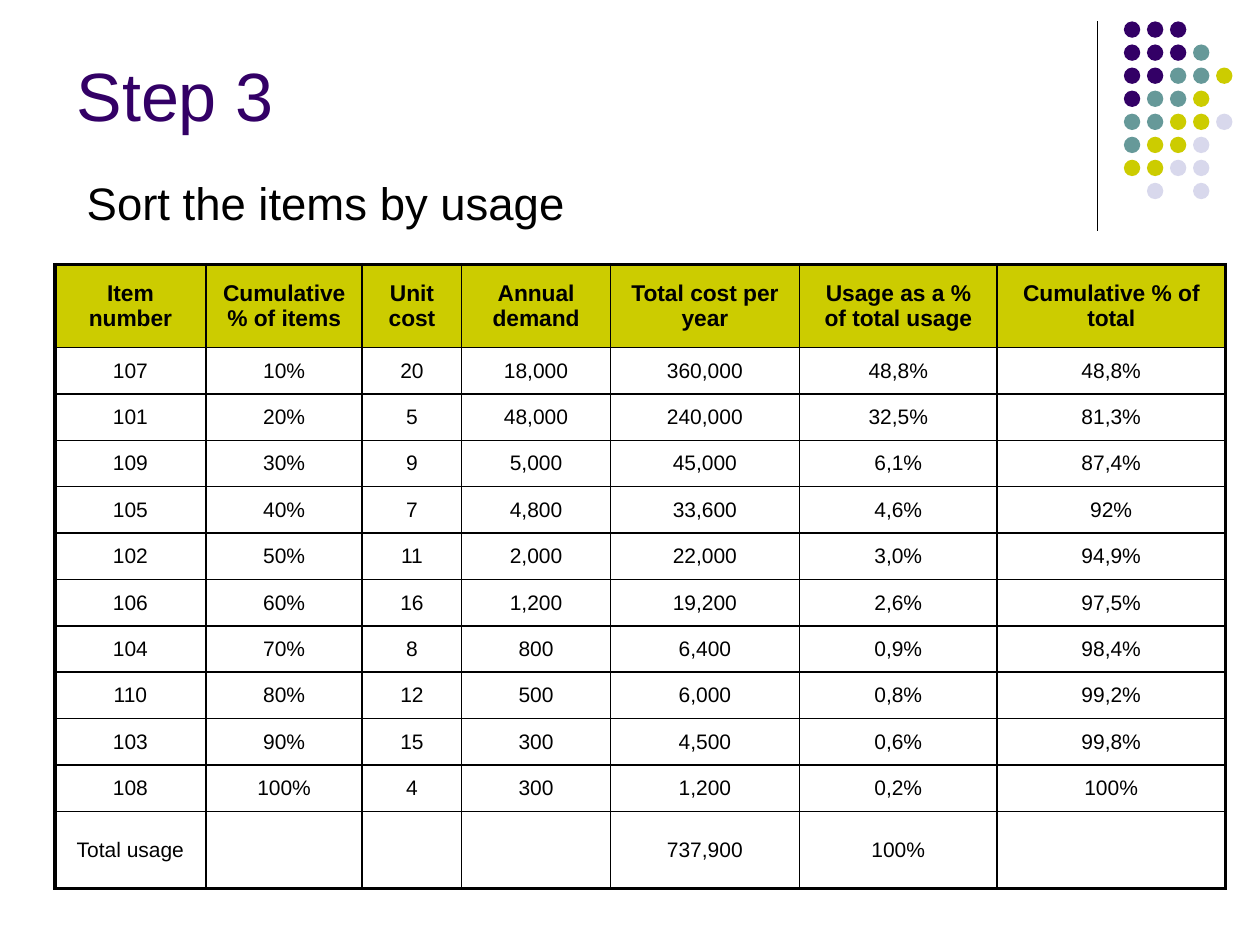
from typing import NamedTuple

from lxml import etree
from pptx import Presentation
from pptx.dml.color import RGBColor
from pptx.enum.shapes import MSO_CONNECTOR, MSO_SHAPE
from pptx.enum.text import MSO_ANCHOR, PP_ALIGN
from pptx.oxml.ns import qn
from pptx.util import Inches, Pt

BLACK = RGBColor(0x00, 0x00, 0x00)
PLUM = RGBColor(0x33, 0x00, 0x66)
TEAL = RGBColor(0x66, 0x99, 0x99)
LIME = RGBColor(0xCC, 0xCC, 0x00)
MIST = RGBColor(0xD8, 0xD8, 0xEC)

TOP, MIDDLE = MSO_ANCHOR.TOP, MSO_ANCHOR.MIDDLE
CENTER = PP_ALIGN.CENTER
OVAL = MSO_SHAPE.OVAL
STRAIGHT = MSO_CONNECTOR.STRAIGHT

WIDE, HIGH = Inches(10), Inches(7.5)
FONT = "Arial"
THIN, THICK = Pt(1), Pt(2.25)

# Dot pattern: one letter per dot, one string per row
HUES = {"P": PLUM, "T": TEAL, "L": LIME, "M": MIST}
DOTS = ["PPP", "PPPT", "PPTTL", "PTTL", "TTLLM", "TLLM", "LLMM", " M M"]
PITCH, DOT = Inches(0.183), Inches(0.13)

# Table grid: percent of the slide's width and height
COLS = [12, 12.4, 7.9, 11.8, 15, 15.7, 18.1]
ROWS = [8.78] + [4.91] * 10 + [8.15]
HEAD = ["Item number", "Cumulative % of items", "Unit cost", "Annual demand",
        "Total cost per year", "Usage as a % of total usage",
        "Cumulative % of total"]
ITEMS = [
    ["107", "10%", "20", "18,000", "360,000", "48,8%", "48,8%"],
    ["101", "20%", "5", "48,000", "240,000", "32,5%", "81,3%"],
    ["109", "30%", "9", "5,000", "45,000", "6,1%", "87,4%"],
    ["105", "40%", "7", "4,800", "33,600", "4,6%", "92%"],
    ["102", "50%", "11", "2,000", "22,000", "3,0%", "94,9%"],
    ["106", "60%", "16", "1,200", "19,200", "2,6%", "97,5%"],
    ["104", "70%", "8", "800", "6,400", "0,9%", "98,4%"],
    ["110", "80%", "12", "500", "6,000", "0,8%", "99,2%"],
    ["103", "90%", "15", "300", "4,500", "0,6%", "99,8%"],
    ["108", "100%", "4", "300", "1,200", "0,2%", "100%"],
]
TOTAL = ["Total usage", "", "", "", "737,900", "100%", ""]


class Label(NamedTuple):
    """Text in a box whose place is in percent of the slide."""
    text: str
    left: float
    top: float
    width: float
    height: float
    size: float
    color: RGBColor
    anchor: MSO_ANCHOR
    inset: float


LABELS = [
    Label("Step 3", 5.1, 0, 82.5, 18.93, 39, PLUM, MIDDLE, 0.13),
    Label("Sort the items by usage", 5.9, 17.47, 70, 65.6, 26, BLACK, TOP, 0.08),
]


def across(share: float) -> int:
    return round(WIDE * share / 100)


def down(share: float) -> int:
    return round(HIGH * share / 100)


def style(font, size: float, color: RGBColor, bold: bool = False) -> None:
    for key, value in {"name": FONT, "size": Pt(size), "bold": bold}.items():
        setattr(font, key, value)
    font.color.rgb = color


def add_label(slide, label: Label) -> None:
    box = slide.shapes.add_textbox(across(label.left), down(label.top),
                                   across(label.width), down(label.height))
    frame = box.text_frame
    form = {"word_wrap": True, "vertical_anchor": label.anchor,
            "margin_top": Inches(label.inset), "text": label.text}
    for key, value in form.items():
        setattr(frame, key, value)
    style(frame.paragraphs[0].runs[0].font, label.size, label.color)


def add_rule(slide) -> None:
    rule = slide.shapes.add_connector(STRAIGHT, across(87.1), down(2.27),
                                      across(87.1), down(24.4))
    rule.line.width = Pt(0.75)
    rule.line.color.rgb = BLACK
    props = rule._element.spPr
    etree.SubElement(props, qn("a:effectLst"))


def add_dots(slide) -> None:
    group = slide.shapes.add_group_shape()
    for row, hues in enumerate(DOTS):
        for col, hue in enumerate(hues):
            if hue not in HUES:
                continue
            dot = group.shapes.add_shape(OVAL, across(89.2) + col * PITCH,
                                         down(2.27) + row * PITCH, DOT, DOT)
            dot.shadow.inherit = False
            dot.fill.solid()
            dot.fill.fore_color.rgb = HUES[hue]
            dot.line.fill.background()


def add_edges(cell, edges: dict[str, int]) -> None:
    """Draw the cell's borders, which must precede its fill in the XML."""
    props = cell._tc.get_or_add_tcPr()
    for place, (side, width) in enumerate(edges.items()):
        line = etree.Element(qn(f"a:ln{side}"), w=str(width))
        fill = etree.SubElement(line, qn("a:solidFill"))
        etree.SubElement(fill, qn("a:srgbClr"), val=str(BLACK))
        props.insert(place, line)


def fill_cell(cell, text: str, head: bool) -> None:
    cell.vertical_anchor = MIDDLE
    if head:
        cell.fill.solid()
        cell.fill.fore_color.rgb = LIME
    else:
        cell.fill.background()
    para = cell.text_frame.paragraphs[0]
    para.alignment = CENTER
    style(para.font, 13 if head else 12, BLACK, head)
    if text:
        run = para.add_run()
        run.text = text
        style(run.font, 13 if head else 12, BLACK, head)


def add_grid(slide) -> None:
    data = [HEAD, *ITEMS, TOTAL]
    table = slide.shapes.add_table(len(ROWS), len(COLS), across(4.35), down(28),
                                   across(sum(COLS)), down(sum(ROWS))).table
    table.first_row = table.horz_banding = False
    for col, share in zip(table.columns, COLS):
        col.width = across(share)
    for row, share in zip(table.rows, ROWS):
        row.height = down(share)
    for r, texts in enumerate(data):
        for c, text in enumerate(texts):
            cell = table.cell(r, c)
            fill_cell(cell, text, r == 0)
            outer = {"L": c == 0, "R": c == len(COLS) - 1,
                     "T": r == 0, "B": r == len(ROWS) - 1}
            add_edges(cell, {side: THICK if rim else THIN
                             for side, rim in outer.items()})


def main() -> None:
    deck = Presentation()
    deck.slide_width, deck.slide_height = WIDE, HIGH
    slide = deck.slides.add_slide(deck.slide_layouts[6])
    add_rule(slide)
    add_dots(slide)
    for label in LABELS:
        add_label(slide, label)
    add_grid(slide)
    deck.save("out.pptx")


if __name__ == "__main__":
    main()
